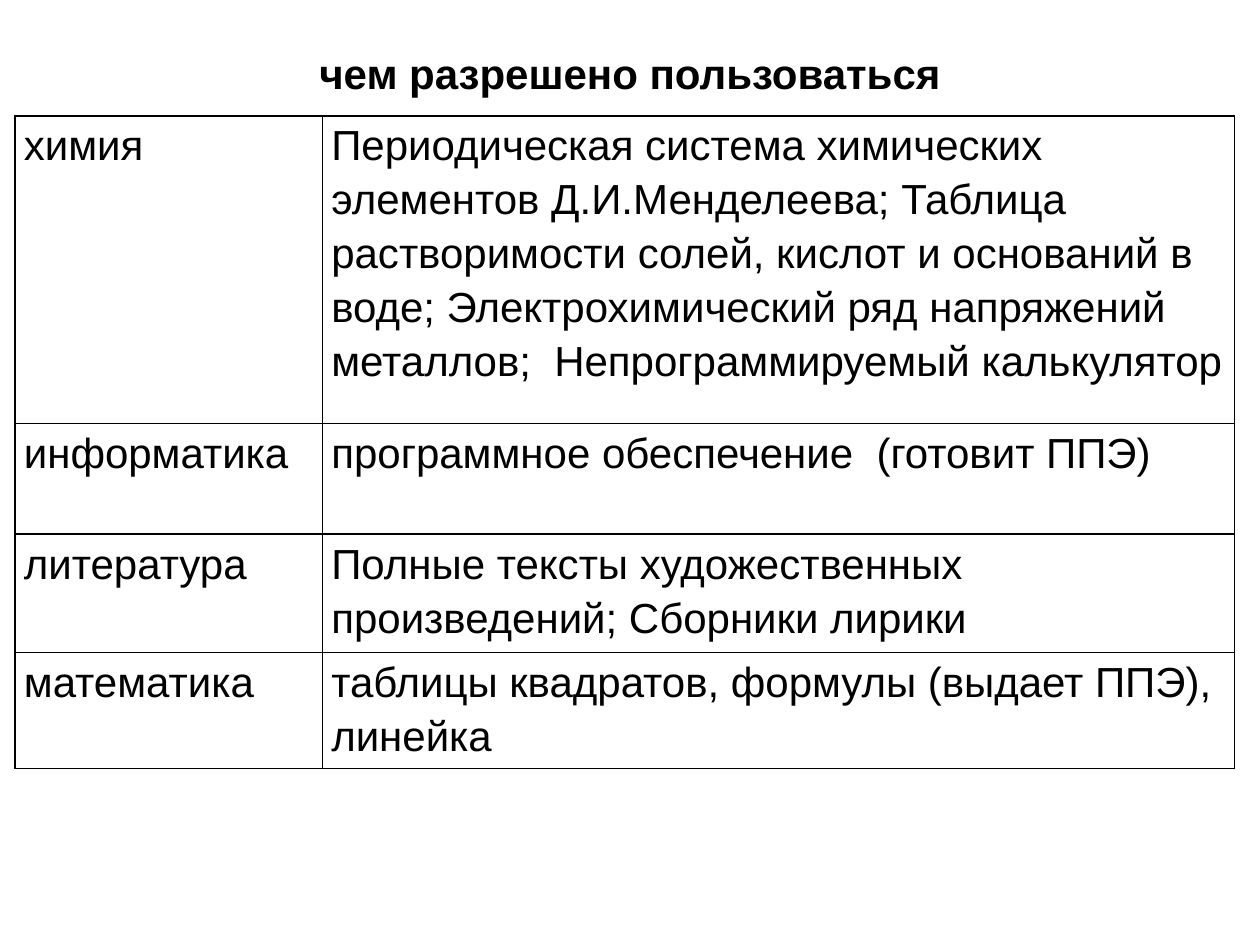
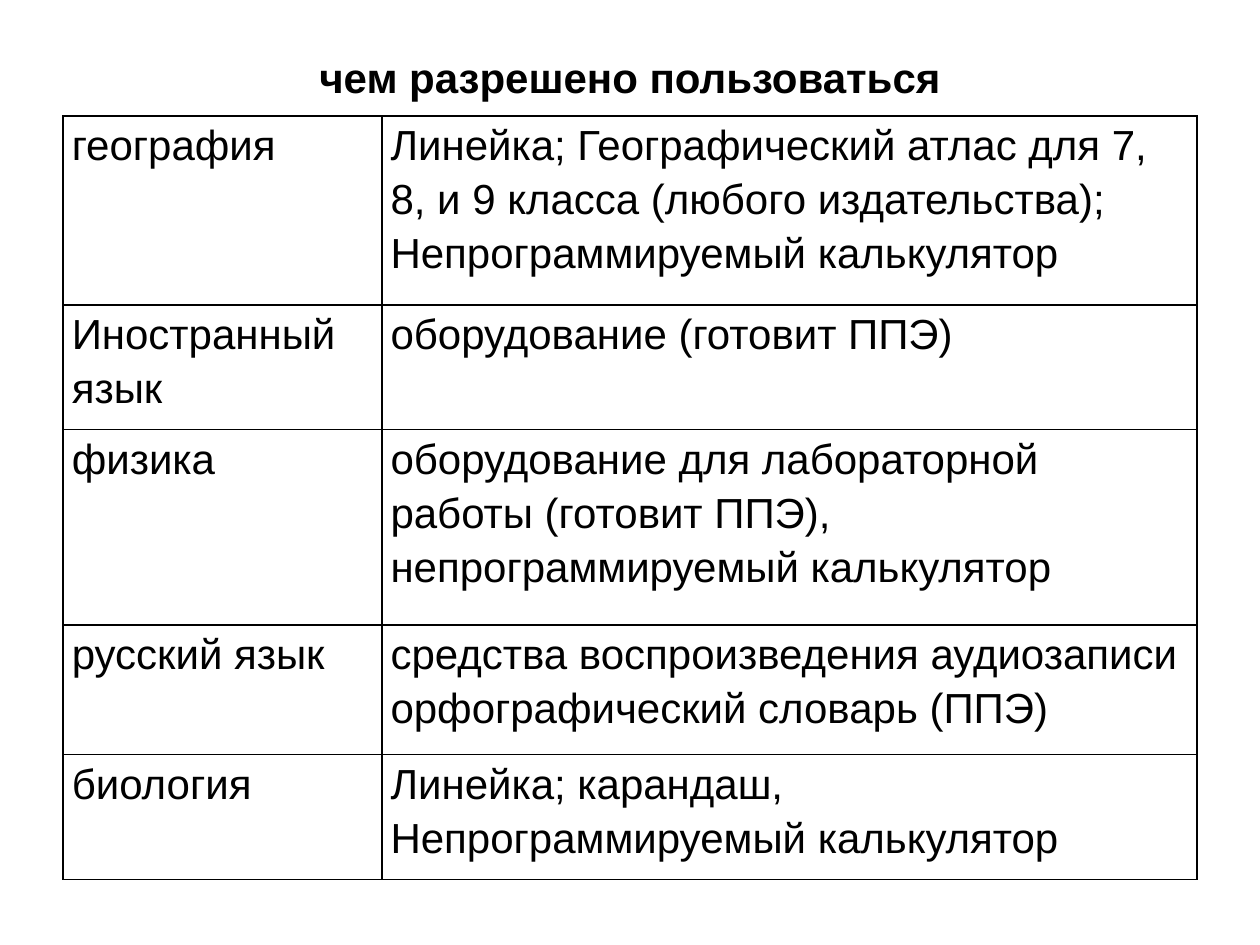
from lxml import etree
from pptx import Presentation
from pptx import util as u
from pptx.dml.color import RGBColor
from pptx.enum import text
from pptx.oxml.ns import qn

COLOURS = {"ink": "000000", "paper": "FFFFFF"}
FONT = {"name": "Arial", "size": u.Pt(24)}
TITLE = "чем разрешено пользоваться"
CELL_MARGINS = {
    "margin_left": u.Inches(0.07),
    "margin_right": u.Inches(0.07),
    "margin_top": 0,
    "margin_bottom": 0,
}
SLIDES = [
    {
        "title_box": (0.5, 0.3, 9, 1.25),
        "title_bottom_margin": 0.74,
        "table_box": (0.12, 0.92, 9.68, 5.12),
        "subject_width": 2.44,
        "row_heights": [2.44, 0.88, 0.94, 0.86],
        "rules": [
            ("химия", "Периодическая система химических элементов Д.И.Менделеева; "
             "Таблица растворимости солей, кислот и оснований в воде; "
             "Электрохимический ряд напряжений металлов;  Непрограммируемый калькулятор"),
            ("информатика", "программное обеспечение  (готовит ППЭ)"),
            ("литература", "Полные тексты художественных произведений; Сборники лирики"),
            ("математика", "таблицы квадратов, формулы (выдает ППЭ), линейка"),
        ],
    },
    {
        "title_box": (0.5, 0.3, 9, 0.61),
        "title_bottom_margin": 0.05,
        "table_box": (0.5, 0.92, 9, 6.06),
        "subject_width": 2.53,
        "row_heights": [1.5, 0.99, 1.55, 1.03, 0.99],
        "rules": [
            ("география", "Линейка; Географический атлас для 7, 8, и 9 класса "
             "(любого издательства); Непрограммируемый калькулятор"),
            ("Иностранный язык", "оборудование (готовит ППЭ)"),
            ("физика", "оборудование для лабораторной работы (готовит ППЭ),\n"
             "непрограммируемый калькулятор"),
            ("русский язык", "средства воспроизведения аудиозаписи\n"
             "орфографический словарь (ППЭ)"),
            ("биология", "Линейка; карандаш, Непрограммируемый калькулятор"),
        ],
    },
]


def set_attributes(target, values):
    """Set every attribute named in values on the target."""
    for name, value in values.items():
        setattr(target, name, value)


def format_text(frame, bold=False, **paragraph_format):
    """Apply the shared font and the paragraph format to a text frame."""
    for paragraph in frame.paragraphs:
        set_attributes(paragraph, paragraph_format)
        for run in paragraph.runs:
            set_attributes(run.font, {**FONT, "bold": bold})
            run.font.color.rgb = RGBColor.from_string(COLOURS["ink"])


def add_borders(cell):
    """Draw a one-point line on all four sides of a cell."""
    properties = cell._tc.get_or_add_tcPr()
    for position, side in enumerate(("lnL", "lnR", "lnT", "lnB")):
        line = etree.Element(qn(f"a:{side}"), w=str(u.Pt(1)))
        fill = etree.SubElement(line, qn("a:solidFill"))
        etree.SubElement(fill, qn("a:srgbClr"), val=COLOURS["ink"])
        properties.insert(position, line)


def add_title(slide, box, bottom_margin):
    """Place the centred bold title in its box."""
    frame = slide.shapes.add_textbox(*map(u.Inches, box)).text_frame
    set_attributes(frame, {
        "word_wrap": True,
        "vertical_anchor": text.MSO_ANCHOR.MIDDLE,
        "margin_bottom": u.Inches(bottom_margin),
        "text": TITLE,
    })
    format_text(frame, bold=True, alignment=text.PP_ALIGN.CENTER)


def add_rules_table(slide, box, subject_width, row_heights, rules):
    """Place the table of subjects and permitted aids in its box."""
    table = slide.shapes.add_table(len(rules), 2, *map(u.Inches, box)).table
    set_attributes(table, {"first_row": False, "horz_banding": False})
    for column, width in zip(table.columns, (subject_width, box[2] - subject_width)):
        column.width = u.Inches(width)
    for row, height, rule in zip(table.rows, row_heights, rules):
        row.height = u.Inches(height)
        for cell, words in zip(row.cells, rule):
            set_attributes(cell, {**CELL_MARGINS, "text": words})
            cell.fill.solid()
            cell.fill.fore_color.rgb = RGBColor.from_string(COLOURS["paper"])
            format_text(cell.text_frame, line_spacing=1.15)
            add_borders(cell)


def main():
    """Build both slides and save the presentation."""
    presentation = Presentation()
    set_attributes(presentation, {"slide_width": u.Inches(10), "slide_height": u.Inches(7.5)})
    for content in SLIDES:
        slide = presentation.slides.add_slide(presentation.slide_layouts[6])
        add_title(slide, content["title_box"], content["title_bottom_margin"])
        add_rules_table(slide, content["table_box"], content["subject_width"],
                        content["row_heights"], content["rules"])
    presentation.save("out.pptx")


if __name__ == "__main__":
    main()
